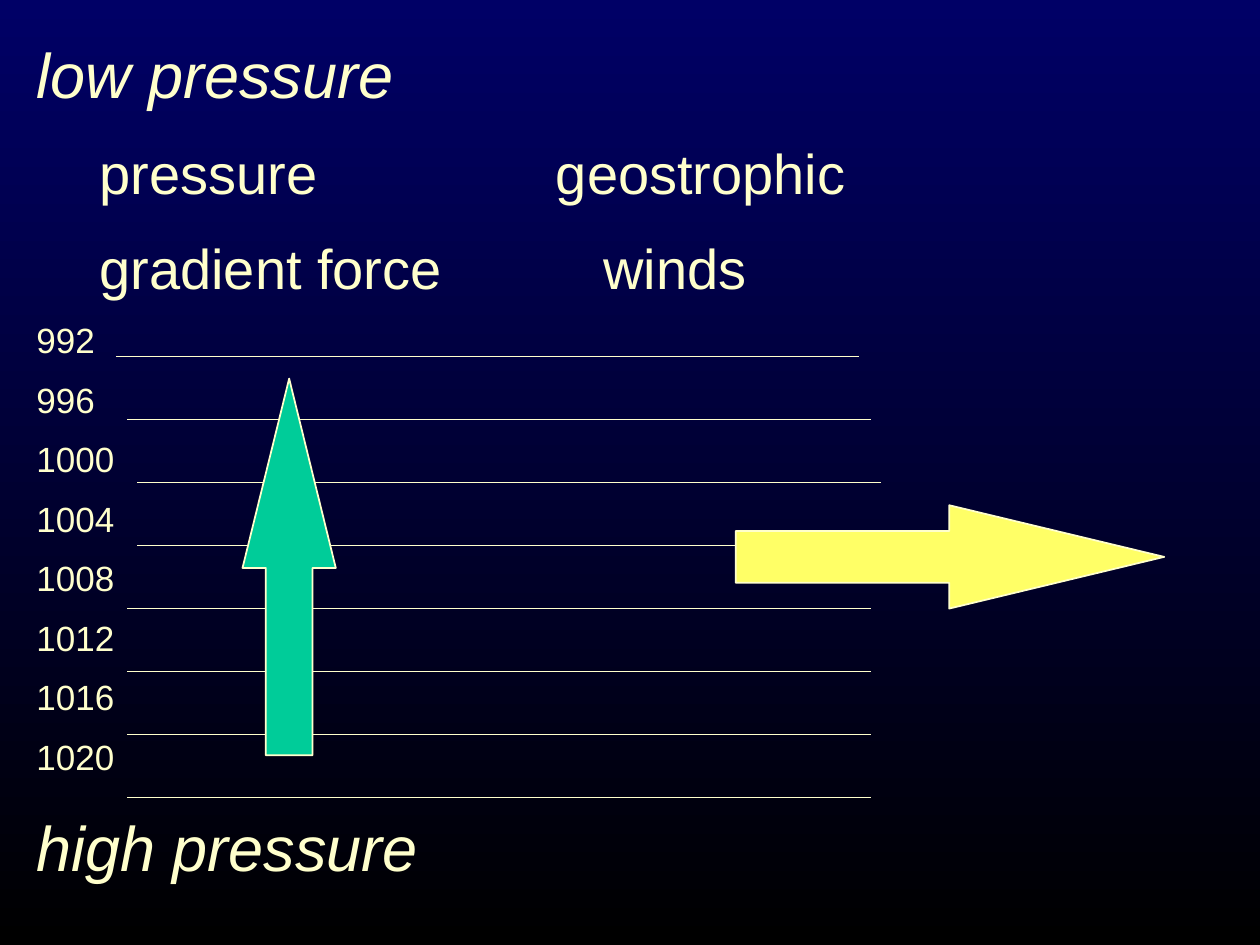
import dataclasses

import pptx
import pptx.dml.color
import pptx.enum.shapes
import pptx.enum.text
import pptx.oxml.ns
import pptx.util
from lxml import etree
from pptx.util import Inches


@dataclasses.dataclass(frozen=True)
class Theme:
    """Colours, font and type sizes of the slide."""
    sky_top: str = "000066"
    sky_bottom: str = "000000"
    ink: str = "FFFFCC"
    force: str = "00CC99"
    wind: str = "FFFF66"
    font: str = "Arial"
    zone: int = 36
    caption: int = 32
    isobar: int = 20
    line: int = 1


THEME = Theme()
ISOBAR_VALUES = range(992, 1021, 4)
ISOBAR_OFFSETS = (0, 0.09, 0.17, 0.17, 0.09, 0.09, 0.09, 0.09)


def rgb(code):
    """Return the colour for a hex code."""
    return pptx.dml.color.RGBColor.from_string(code)


def apply_format(target, values):
    """Set each attribute named in values on target."""
    for name, value in values.items():
        setattr(target, name, value)


def style_line(line):
    """Give a line the ink colour and the common width."""
    line.color.rgb = rgb(THEME.ink)
    line.width = pptx.util.Pt(THEME.line)


def paint_sky(slide):
    """Fill the background with a gradient from top to bottom."""
    fill = slide.background.fill
    fill.gradient()
    fill.gradient_angle = 270
    for stop, code in zip(fill.gradient_stops, (THEME.sky_top, THEME.sky_bottom)):
        stop.color.rgb = rgb(code)


def space_before_half(paragraph):
    """Put half a line of space before a paragraph."""
    qn = pptx.oxml.ns.qn
    spacing = etree.SubElement(paragraph._p.get_or_add_pPr(), qn("a:spcBef"))
    etree.SubElement(spacing, qn("a:spcPct")).set("val", "50000")


def write_labels(slide, left, top, width, height):
    """Write the pressure zones, captions and isobar values in one column."""
    frame = slide.shapes.add_textbox(
        Inches(left), Inches(top), Inches(width), Inches(height)).text_frame
    apply_format(frame, {"word_wrap": True,
                         "auto_size": pptx.enum.text.MSO_AUTO_SIZE.NONE})
    labels = [
        ("low pressure", THEME.zone, True),
        ("\tpressure \t\t\t\t geostrophic", THEME.caption, False),
        ("\tgradient force \t\t\twinds", THEME.caption, False),
        *((str(value), THEME.isobar, False) for value in ISOBAR_VALUES),
        ("high pressure", THEME.zone, True),
    ]
    for index, (wording, size, italic) in enumerate(labels):
        paragraph = frame.add_paragraph() if index else frame.paragraphs[0]
        space_before_half(paragraph)
        label = paragraph.add_run()
        label.text = wording
        apply_format(label.font, {"name": THEME.font, "italic": italic,
                                  "size": pptx.util.Pt(size)})
        label.font.color.rgb = rgb(THEME.ink)


def draw_isobars(slide, left, top, width, height):
    """Draw the isobars at equal steps down the given box."""
    step = height / (len(ISOBAR_OFFSETS) - 1)
    for index, offset in enumerate(ISOBAR_OFFSETS):
        start, level = left + offset, top + index * step
        isobar = slide.shapes.add_connector(
            pptx.enum.shapes.MSO_CONNECTOR.STRAIGHT, Inches(start),
            Inches(level), Inches(start + width), Inches(level))
        style_line(isobar.line)
        etree.SubElement(isobar._element.spPr, pptx.oxml.ns.qn("a:effectLst"))


def draw_arrow(slide, left, top, width, height, color, head, rotation=0):
    """Draw a block arrow whose head is given relative to its height."""
    arrow = slide.shapes.add_shape(
        pptx.enum.shapes.MSO_SHAPE.RIGHT_ARROW,
        Inches(left), Inches(top), Inches(width), Inches(height))
    arrow.adjustments[0], arrow.adjustments[1] = 0.5, head
    arrow.rotation = rotation
    arrow.shadow.inherit = False
    arrow.fill.solid()
    arrow.fill.fore_color.rgb = rgb(color)
    style_line(arrow.line)


def main():
    """Build and save the geostrophic wind slide."""
    deck = pptx.Presentation()
    apply_format(deck, {"slide_width": Inches(10), "slide_height": Inches(7.5)})
    slide = deck.slides.add_slide(deck.slide_layouts[6])
    paint_sky(slide)
    write_labels(slide, 0.19, 0.23, 9.51, 7.2)
    draw_isobars(slide, 0.92, 2.83, 5.9, 3.5)
    draw_arrow(slide, 0.8, 4.13, 2.99, 0.74, THEME.force, 2.03, rotation=270)
    draw_arrow(slide, 5.84, 4.01, 3.4, 0.82, THEME.wind, 2.08)
    deck.save("out.pptx")


if __name__ == "__main__":
    main()
